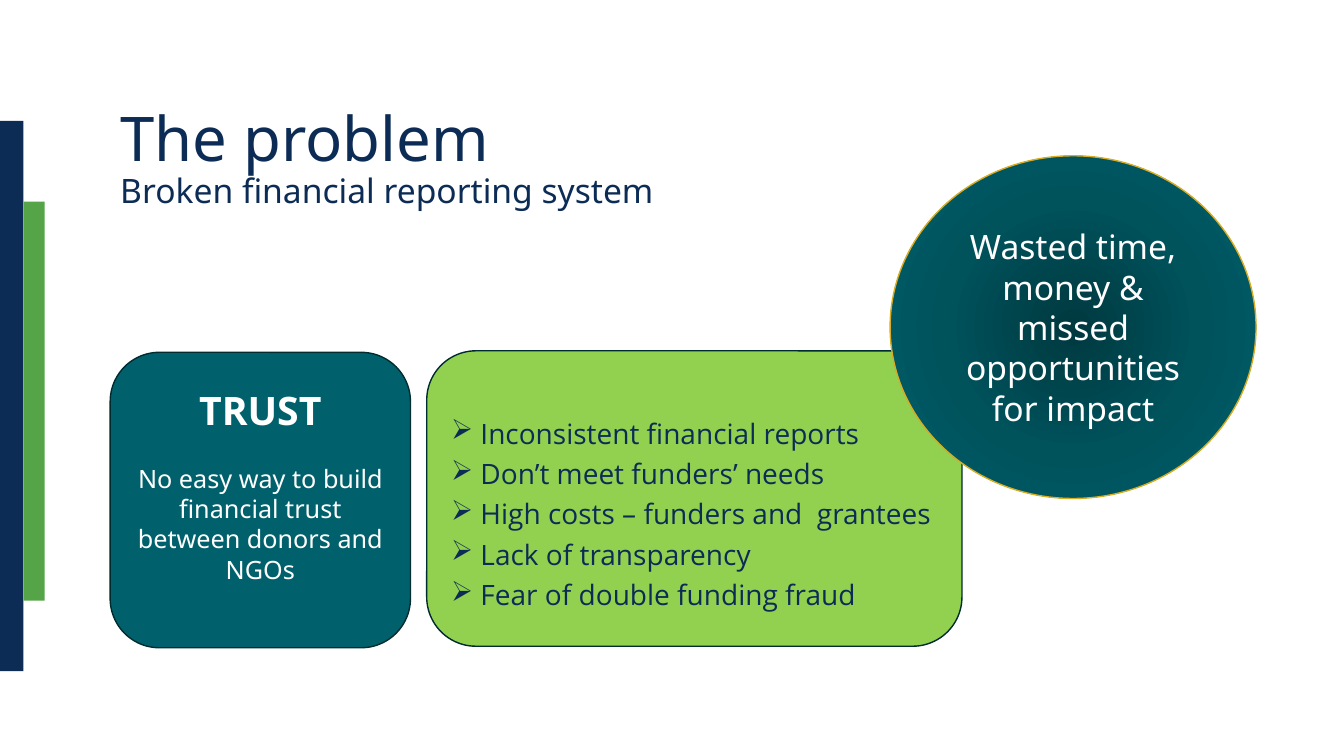
from dataclasses import dataclass

from lxml import etree
from pptx import Presentation
from pptx.dml.color import RGBColor
from pptx.enum import shapes, text
from pptx.oxml import parse_xml
from pptx.oxml.ns import nsdecls, qn
from pptx.util import Pt

NAVY, TEAL, WHITE = "0C2C56", "00616C", "FFFFFF"
NOTO, OPEN = "Noto Sans", "Open Sans"
BULLET_INDENT = 21


@dataclass(frozen=True)
class Line:
    words: str
    size: float
    color: str = WHITE
    face: str = NOTO
    bold: bool = False
    bullet: str = ""
    spacing: float = 1.0
    before: float = 0


@dataclass(frozen=True)
class Panel:
    kind: shapes.MSO_SHAPE
    box: tuple[float, float, float, float]
    fill: str
    outline: str = ""
    lines: tuple[Line, ...] = ()
    top_inset: float = 3.6
    bottom_inset: float = 3.6


REPORTING_FAULTS = (
    "Inconsistent financial reports",
    "Don’t meet funders’ needs",
    "High costs – funders and  grantees",
    "Lack of transparency",
    "Fear of double funding fraud",
)

SIDE_BARS = (
    Panel(shapes.MSO_SHAPE.RECTANGLE, (0, 86.4, 16.8, 393), NAVY),
    Panel(shapes.MSO_SHAPE.RECTANGLE, (16.8, 144, 15.1, 285), "56A448"),
)
TRUST = Panel(
    shapes.MSO_SHAPE.ROUNDED_RECTANGLE, (78.7, 251.7, 214.5, 211), TEAL, "002B2F",
    (
        Line("TRUST", 28, bold=True),
        Line("No easy way to build financial trust between donors and NGOs",
             18, before=21.6),
    ),
    bottom_inset=25,
)
FAULTS = Panel(
    shapes.MSO_SHAPE.ROUNDED_RECTANGLE, (304.8, 250.6, 382.3, 211), "92D050", "002B2F",
    tuple(Line(fault, 20, NAVY, OPEN, bullet="➢", spacing=1.2)
          for fault in REPORTING_FAULTS),
    top_inset=42, bottom_inset=25,
)
IMPACT = Panel(
    shapes.MSO_SHAPE.OVAL, (635.8, 111.3, 261.4, 244.8), TEAL, "D8AD24",
    (Line("Wasted time, money & missed opportunities for impact", 24),),
)
IMPACT_GLOW = ((0, "003940"), (50, "00525B"), (100, TEAL))


def rgb(color: str) -> RGBColor:
    return RGBColor.from_string(color)


def add_bullet(paragraph, mark: str) -> None:
    properties = paragraph._p.get_or_add_pPr()
    properties.set("marL", str(Pt(BULLET_INDENT)))
    properties.set("indent", str(-Pt(BULLET_INDENT)))
    etree.SubElement(properties, qn("a:buChar")).set("char", mark)


def write_lines(frame, lines: tuple[Line, ...]) -> None:
    for index, line in enumerate(lines):
        paragraph = frame.add_paragraph() if index else frame.paragraphs[0]
        paragraph.text = line.words
        paragraph.alignment = (
            text.PP_ALIGN.LEFT if line.bullet else text.PP_ALIGN.CENTER)
        paragraph.line_spacing = line.spacing
        if line.before:
            paragraph.space_before = Pt(line.before)
        if line.bullet:
            add_bullet(paragraph, line.bullet)
        font = paragraph.font
        font.name, font.size, font.bold = line.face, Pt(line.size), line.bold
        font.color.rgb = rgb(line.color)


def add_panel(slide, panel: Panel):
    shape = slide.shapes.add_shape(panel.kind, *map(Pt, panel.box))
    shape.shadow.inherit = False
    shape.fill.solid()
    shape.fill.fore_color.rgb = rgb(panel.fill)
    if panel.outline:
        shape.line.color.rgb = rgb(panel.outline)
        shape.line.width = Pt(1)
    else:
        shape.line.fill.background()
    if panel.lines:
        frame = shape.text_frame
        frame.word_wrap = True
        frame.vertical_anchor = text.MSO_ANCHOR.MIDDLE
        frame.margin_top = Pt(panel.top_inset)
        frame.margin_bottom = Pt(panel.bottom_inset)
        write_lines(frame, panel.lines)
    return shape


def set_radial_fill(shape, stops: tuple[tuple[int, str], ...]) -> None:
    """Replace the solid fill with a gradient spreading from the centre."""
    stop_xml = "".join(
        f'<a:gs pos="{percent * 1000}"><a:srgbClr val="{color}"/></a:gs>'
        for percent, color in stops)
    gradient = parse_xml(
        f'<a:gradFill {nsdecls("a")} rotWithShape="1"><a:gsLst>{stop_xml}</a:gsLst>'
        '<a:path path="circle"><a:fillToRect l="50000" t="50000" r="50000" b="50000"/>'
        "</a:path></a:gradFill>")
    properties = shape._element.spPr
    properties.replace(properties.find(qn("a:solidFill")), gradient)


def write_title(title) -> None:
    title.left, title.top, title.width, title.height = map(Pt, (78.7, 61.9, 828, 104.4))
    frame = title.text_frame
    frame.auto_size = text.MSO_AUTO_SIZE.NONE
    frame.word_wrap = True
    frame.vertical_anchor = text.MSO_ANCHOR.MIDDLE
    paragraph = frame.paragraphs[0]
    paragraph.alignment = text.PP_ALIGN.LEFT
    paragraph.line_spacing = 0.9
    paragraph.font.name = NOTO
    paragraph.font.color.rgb = rgb(NAVY)
    heading = paragraph.add_run()
    heading.text, heading.font.size = "The problem", Pt(44)
    paragraph.add_line_break()
    subheading = paragraph.add_run()
    subheading.text, subheading.font.size = "Broken financial reporting system", Pt(24)


def main() -> None:
    deck = Presentation()
    deck.slide_width, deck.slide_height = Pt(960), Pt(540)
    slide = deck.slides.add_slide(deck.slide_layouts.get_by_name("Title Only"))
    write_title(slide.shapes.title)
    for panel in (*SIDE_BARS, TRUST, FAULTS):
        add_panel(slide, panel)
    set_radial_fill(add_panel(slide, IMPACT), IMPACT_GLOW)
    deck.save("out.pptx")


if __name__ == "__main__":
    main()
